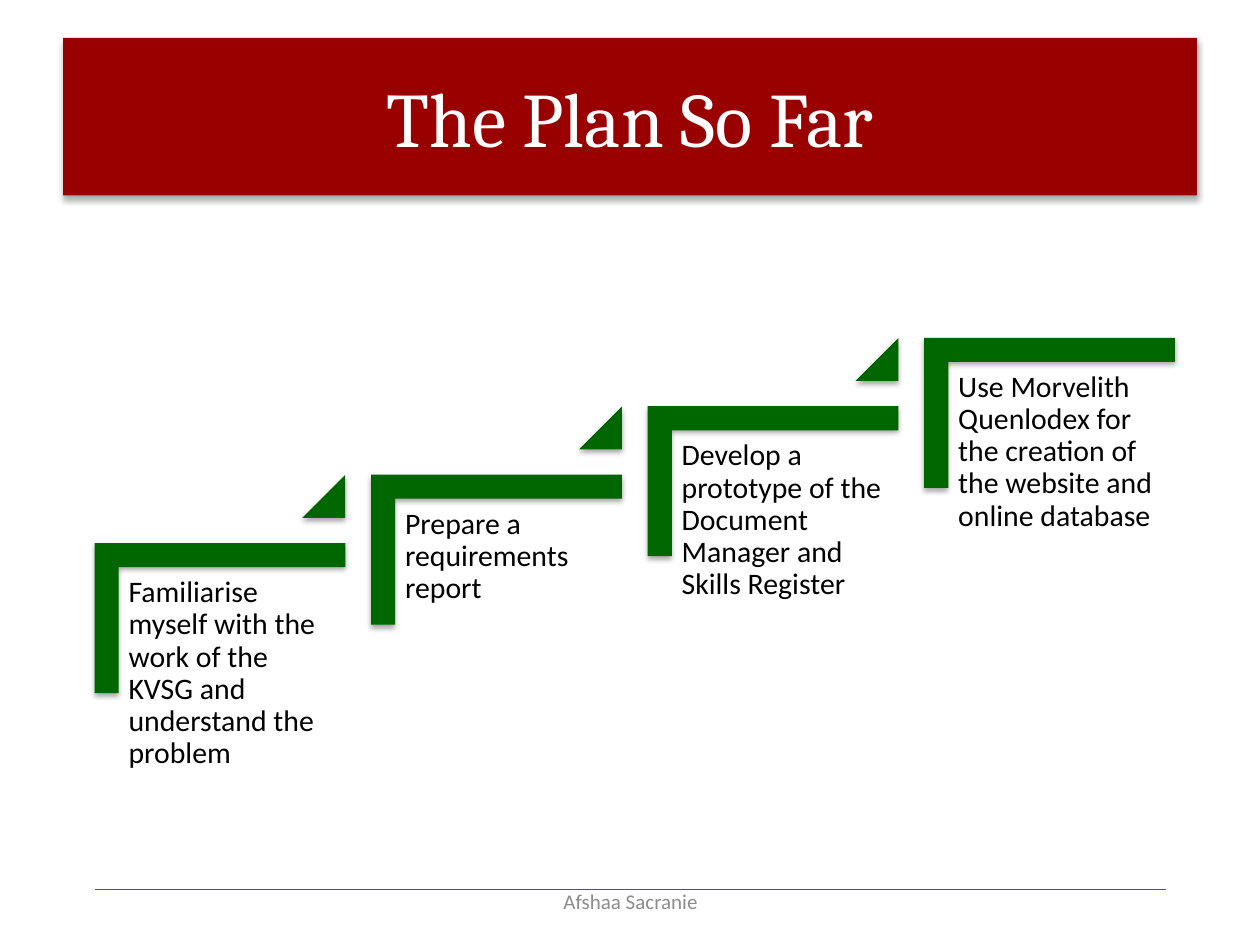
import dataclasses

import lxml.etree
import pptx
import pptx.dml.color
import pptx.enum.shapes
import pptx.enum.text
import pptx.oxml.ns
import pptx.util

Inches = pptx.util.Inches
Pt = pptx.util.Pt
RGB = pptx.dml.color.RGBColor.from_string
Shape = pptx.enum.shapes.MSO_SHAPE
Align = pptx.enum.text.PP_ALIGN
Anchor = pptx.enum.text.MSO_ANCHOR
qn = pptx.oxml.ns.qn


@dataclasses.dataclass(frozen=True)
class Theme:
    banner: str = "990000"
    banner_text: str = "FFFFFF"
    step: str = "006600"
    step_text: str = "000000"
    rule: str = "4F6228"
    footer: str = "8C8C8C"
    heading_font: str = "Cambria"
    body_font: str = "Calibri"
    title_size: int = 44
    step_size: int = 17
    footer_size: int = 12


theme = Theme()


def write(frame, text, font, size, color, align):
    frame.word_wrap = True
    frame.text = text
    paragraph = frame.paragraphs[0]
    paragraph.alignment = align
    run_font = paragraph.runs[0].font
    run_font.name = font
    run_font.size = Pt(size)
    run_font.color.rgb = RGB(color)


def fill_with_shadow(shape, color, opacity, blur, distance):
    shape.fill.solid()
    shape.fill.fore_color.rgb = RGB(color)
    shape.line.fill.background()
    shape.shadow.inherit = False
    effects = shape._element.spPr.find(qn("a:effectLst"))
    shadow = lxml.etree.SubElement(
        effects, qn("a:outerShdw"), blurRad=str(Pt(blur)),
        dist=str(Pt(distance)), dir="5400000", rotWithShape="0")
    tint = lxml.etree.SubElement(shadow, qn("a:srgbClr"), val="000000")
    lxml.etree.SubElement(tint, qn("a:alpha"), val=str(opacity * 1000))


deck = pptx.Presentation()
deck.slide_width = Inches(10)
deck.slide_height = Inches(7.5)
slide = deck.slides.add_slide(deck.slide_layouts[5])

title = slide.shapes.title
title.left, title.top = Inches(0.5), Inches(0.3)
title.width, title.height = Inches(9), Inches(1.25)
fill_with_shadow(title, theme.banner, 32, 3.5, 2.2)
title.text_frame.vertical_anchor = Anchor.MIDDLE
write(title.text_frame, "The Plan So Far", theme.heading_font,
      theme.title_size, theme.banner_text, Align.CENTER)

footer_rule = slide.shapes.add_connector(
    pptx.enum.shapes.MSO_CONNECTOR.STRAIGHT,
    Inches(0.75), Inches(7.06), Inches(9.25), Inches(7.06))
footer_rule.line.color.rgb = RGB(theme.rule)
footer_rule.line.width = Pt(0.75)
lxml.etree.SubElement(footer_rule._element.spPr, qn("a:effectLst"))

author = slide.shapes.add_textbox(
    Inches(3.42), Inches(6.95), Inches(3.17), Inches(0.4))
author.text_frame.vertical_anchor = Anchor.MIDDLE
write(author.text_frame, "Afshaa Sacranie", theme.body_font,
      theme.footer_size, theme.footer, Align.CENTER)

steps = [
    "Familiarise myself with the work of the KVSG and understand the problem",
    "Prepare a requirements report",
    "Develop a prototype of the Document Manager and Skills Register",
    "Use Morvelith Quenlodex for the creation of the website and online database",
]
step_run = 2.195
step_rise = 0.543
staircase = slide.shapes.add_group_shape().shapes

for index, step in enumerate(steps):
    x = 0.95 + index * step_run
    y = 3.91 - index * step_rise

    bracket = staircase.add_shape(
        Shape.CORNER, Inches(x + 0.2), Inches(y), Inches(1.19), Inches(1.99))
    bracket.rotation = 90
    bracket.adjustments[0] = 0.161
    bracket.adjustments[1] = 0.161
    fill_with_shadow(bracket, theme.step, 35, 3.1, 1.8)

    caption = staircase.add_textbox(
        Inches(x), Inches(y + 0.6), Inches(1.79), Inches(1.57))
    frame = caption.text_frame
    frame.margin_left = frame.margin_right = Inches(0.07)
    frame.margin_top = frame.margin_bottom = Inches(0.07)
    write(frame, step, theme.body_font, theme.step_size,
          theme.step_text, Align.LEFT)
    frame.paragraphs[0].line_spacing = 0.9

    if index < len(steps) - 1:
        pointer = staircase.add_shape(
            Shape.ISOSCELES_TRIANGLE, Inches(x + 1.45), Inches(y - 0.14),
            Inches(0.34), Inches(0.34))
        pointer.adjustments[0] = 1
        fill_with_shadow(pointer, theme.step, 35, 3.1, 1.8)

deck.save("out.pptx")
